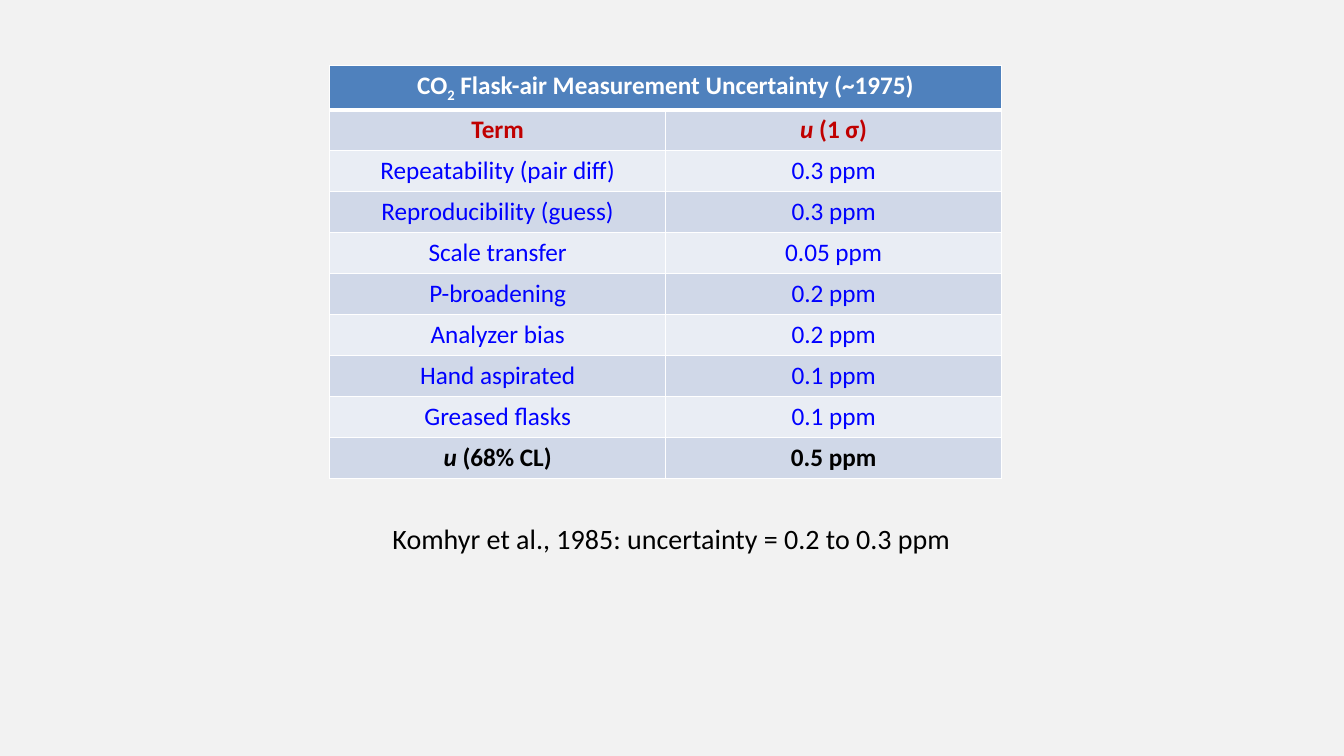
import pptx
import pptx.dml.color
import pptx.enum.text
import pptx.oxml
import pptx.oxml.ns
import pptx.util

RGBColor = pptx.dml.color.RGBColor
BACKGROUND = RGBColor(0xF2, 0xF2, 0xF2)
HEADER_BLUE = RGBColor(0x4F, 0x81, 0xBD)
BAND_DARK = RGBColor(0xD0, 0xD8, 0xE8)
BAND_LIGHT = RGBColor(0xE9, 0xED, 0xF4)
WHITE = RGBColor(0xFF, 0xFF, 0xFF)
RED = RGBColor(0xC0, 0x00, 0x00)
BLUE = RGBColor(0x00, 0x00, 0xFF)
BLACK = RGBColor(0x00, 0x00, 0x00)

EMU_PER_PX = 4762.5  # 192 px to the inch
SLIDE_WIDTH, SLIDE_HEIGHT = 2560, 1440
ROW_HEIGHT = 78

# Each cell is a list of (text, style) runs; style is "", "italic" or "subscript"
TITLE = [("CO", ""), ("2", "subscript"),
         (" Flask-air Measurement Uncertainty (~1975)", "")]
COLUMN_HEADS = [[("Term", "")], [("u ", "italic"), ("(1 σ)", "")]]
TERMS = [
    ("Repeatability (pair diff)", "0.3 ppm"),
    ("Reproducibility (guess)", "0.3 ppm"),
    ("Scale transfer", "0.05 ppm"),
    ("P-broadening", "0.2 ppm"),
    ("Analyzer bias", "0.2 ppm"),
    ("Hand aspirated", "0.1 ppm"),
    ("Greased flasks", "0.1 ppm"),
]
TOTAL = [[("u", "italic"), (" (68% CL)", "")], [("0.5 ppm", "")]]


def px(length):
    return pptx.util.Emu(round(length * EMU_PER_PX))


class SlideBuilder:
    """Holds the style and the current slide."""

    font_name = "Calibri"

    def __init__(self, presentation):
        self.slide = presentation.slides.add_slide(presentation.slide_layouts[6])
        self.slide.background.fill.solid()
        self.slide.background.fill.fore_color.rgb = BACKGROUND

    def add_runs(self, text_frame, runs, size, color, bold=False):
        paragraph = text_frame.paragraphs[0]
        paragraph.alignment = pptx.enum.text.PP_ALIGN.CENTER
        for text, style in runs:
            run = paragraph.add_run()
            run.text = text
            run.font.name = self.font_name
            run.font.size = pptx.util.Pt(size)
            run.font.color.rgb = color
            run.font.bold = bold
            run.font.italic = style == "italic"
            if style == "subscript":
                run._r.get_or_add_rPr().set("baseline", "-25000")

    def text(self, left, top, width, height, runs, size, color):
        box = self.slide.shapes.add_textbox(px(left), px(top), px(width), px(height))
        box.text_frame.word_wrap = True
        self.add_runs(box.text_frame, runs, size, color)

    def table(self, left, top, width, row_count, column_count):
        frame = self.slide.shapes.add_table(
            row_count, column_count, px(left), px(top), px(width),
            px(row_count * ROW_HEIGHT))
        return frame.table

    def cell(self, cell, fill, top_border=1, bottom_border=1):
        cell.fill.solid()
        cell.fill.fore_color.rgb = fill
        properties = cell._tc.get_or_add_tcPr()
        borders = {"L": 1, "R": 1, "T": top_border, "B": bottom_border}
        for index, (side, points) in enumerate(borders.items()):
            properties.insert(index, pptx.oxml.parse_xml(
                f'<a:ln{side} {pptx.oxml.ns.nsdecls("a")} w="{pptx.util.Pt(points)}">'
                f'<a:solidFill><a:srgbClr val="{WHITE}"/></a:solidFill></a:ln{side}>'))


def main():
    presentation = pptx.Presentation()
    presentation.slide_width = px(SLIDE_WIDTH)
    presentation.slide_height = px(SLIDE_HEIGHT)
    builder = SlideBuilder(presentation)

    # Uncertainty table: title row, column heads, terms, total
    body = [(COLUMN_HEADS, RED, True)]
    body += [([[(term, "")], [(value, "")]], BLUE, False) for term, value in TERMS]
    body.append((TOTAL, BLACK, True))
    table = builder.table(628, 125, 1280, len(body) + 1, 2)

    for cell in table.rows[0].cells:
        builder.cell(cell, HEADER_BLUE, bottom_border=3)
    table.cell(0, 0).merge(table.cell(0, 1))
    builder.add_runs(table.cell(0, 0).text_frame, TITLE, 18, WHITE, bold=True)

    for row, (cells, color, bold) in enumerate(body, start=1):
        for column, runs in enumerate(cells):
            cell = table.cell(row, column)
            builder.cell(cell, BAND_DARK if row % 2 else BAND_LIGHT,
                         top_border=3 if row == 1 else 1)
            builder.add_runs(cell.text_frame, runs, 18, color, bold)

    # Published value for comparison
    builder.text(543, 983, 1472, 84,
                 [("Komhyr et al., 1985: uncertainty = 0.2 to 0.3 ppm", "")], 20, BLACK)

    presentation.save("out.pptx")


if __name__ == "__main__":
    main()
